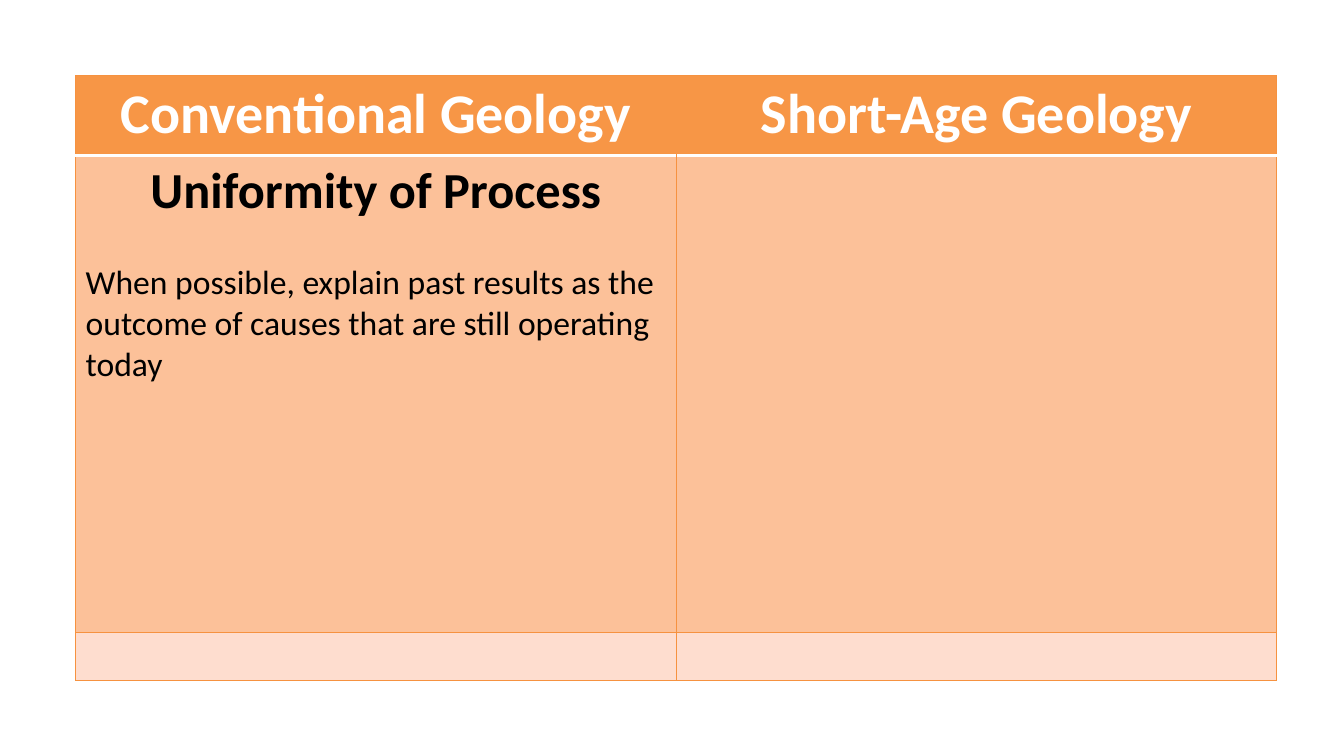
from lxml.etree import SubElement
from pptx import Presentation
from pptx.dml.color import RGBColor
from pptx.enum.text import PP_ALIGN
from pptx.oxml.ns import qn
from pptx.util import Pt

HEADINGS = ["Conventional Geology", "Short-Age Geology"]
PRINCIPLE = "Uniformity of Process"
EXPLANATION = (
    "When possible, explain past results as the outcome of causes "
    "that are still operating today"
)

FONT = "Calibri"
WHITE = RGBColor(0xFF, 0xFF, 0xFF)
BLACK = RGBColor(0x00, 0x00, 0x00)
ORANGE = RGBColor(0xF7, 0x96, 0x46)
BORDER = RGBColor(0xF6, 0x92, 0x40)
ROW_FILLS = [ORANGE, RGBColor(0xFC, 0xC1, 0x99), RGBColor(0xFE, 0xDD, 0xCF)]

MARGIN = 54
COLUMN_WIDTH = 429
ROW_HEIGHTS = [57, 341, 34]

THIN = (BORDER, 0.75)
RULE = (WHITE, 2)


def set_borders(cell, **edges):
    """Draw edges L, R, T and B as (colour, width), or hide one given None."""
    properties = cell._tc.get_or_add_tcPr()
    for side, border in edges.items():
        line = SubElement(properties, qn(f"a:ln{side}"))
        if border is None:
            SubElement(line, qn("a:noFill"))
            continue
        colour, width = border
        line.set("w", str(Pt(width)))
        fill = SubElement(line, qn("a:solidFill"))
        SubElement(fill, qn("a:srgbClr")).set("val", str(colour))


def write(paragraph, text, size, colour, bold=True, align=PP_ALIGN.CENTER):
    paragraph.text = text
    paragraph.alignment = align
    font = paragraph.runs[0].font
    font.name = FONT
    font.size = Pt(size)
    font.bold = bold
    font.color.rgb = colour


presentation = Presentation()
presentation.slide_width = Pt(960)
presentation.slide_height = Pt(540)
slide = presentation.slides.add_slide(presentation.slide_layouts[6])

column_count = len(HEADINGS)
table = slide.shapes.add_table(
    len(ROW_HEIGHTS), column_count, Pt(MARGIN), Pt(MARGIN),
    Pt(COLUMN_WIDTH * column_count), Pt(sum(ROW_HEIGHTS)),
).table
table.horz_banding = False
for column in table.columns:
    column.width = Pt(COLUMN_WIDTH)

for row_index, (height, fill) in enumerate(zip(ROW_HEIGHTS, ROW_FILLS)):
    table.rows[row_index].height = Pt(height)
    is_header = row_index == 0
    inner = None if is_header else THIN
    for column_index in range(column_count):
        cell = table.cell(row_index, column_index)
        set_borders(
            cell,
            L=THIN if column_index == 0 else inner,
            R=THIN if column_index == column_count - 1 else inner,
            T=RULE if row_index == 1 else THIN,
            B=RULE if is_header else THIN,
        )
        cell.fill.solid()
        cell.fill.fore_color.rgb = fill

for column_index, heading in enumerate(HEADINGS):
    write(table.cell(0, column_index).text_frame.paragraphs[0], heading, 40, WHITE)

principle_frame = table.cell(1, 0).text_frame
principle = principle_frame.paragraphs[0]
write(principle, PRINCIPLE, 36, BLACK)
principle.space_after = Pt(29)
write(principle_frame.add_paragraph(), EXPLANATION, 24, BLACK,
      bold=False, align=PP_ALIGN.LEFT)

presentation.save("out.pptx")
